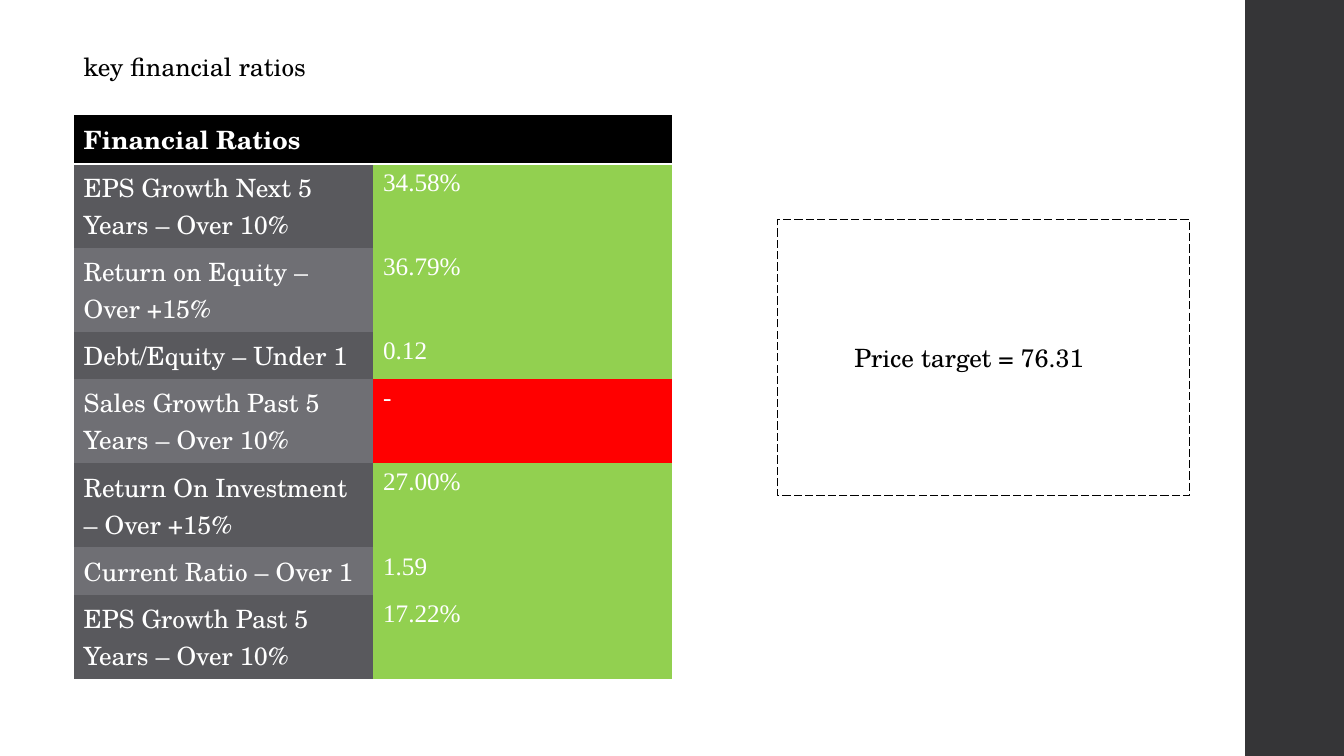
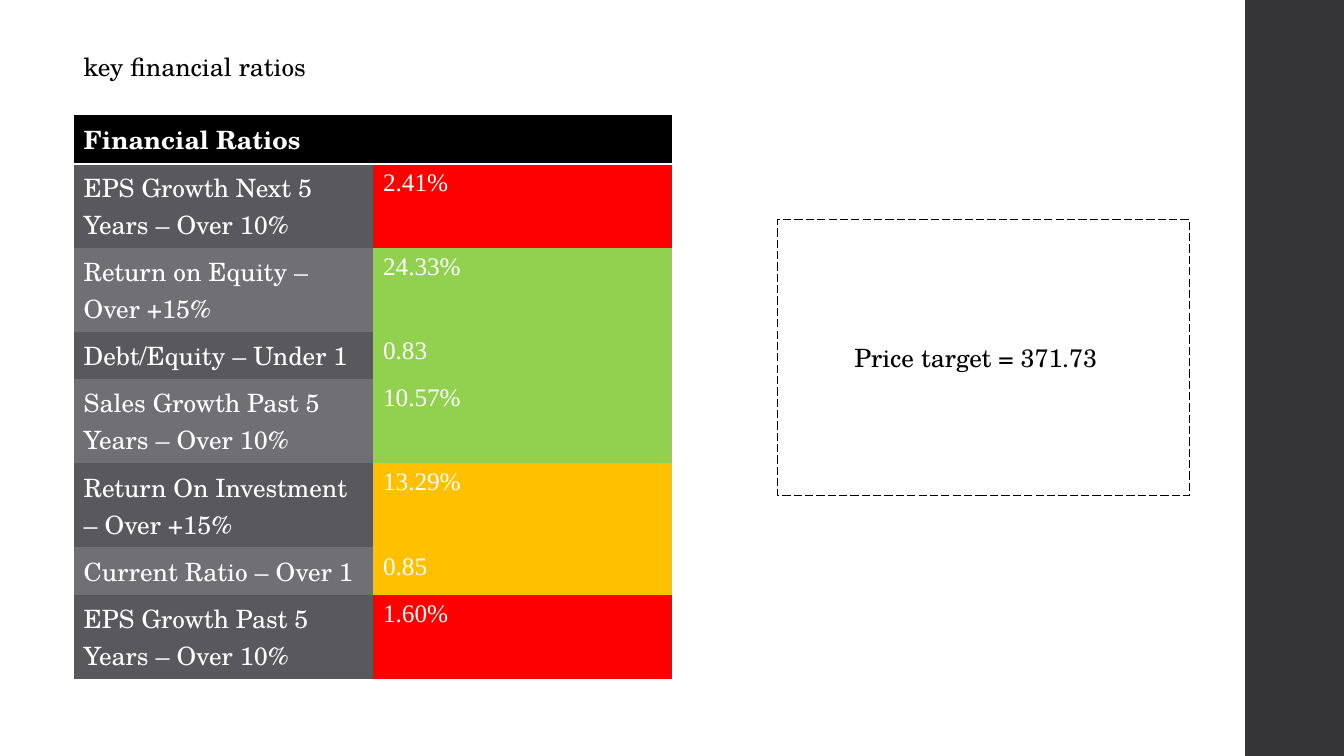
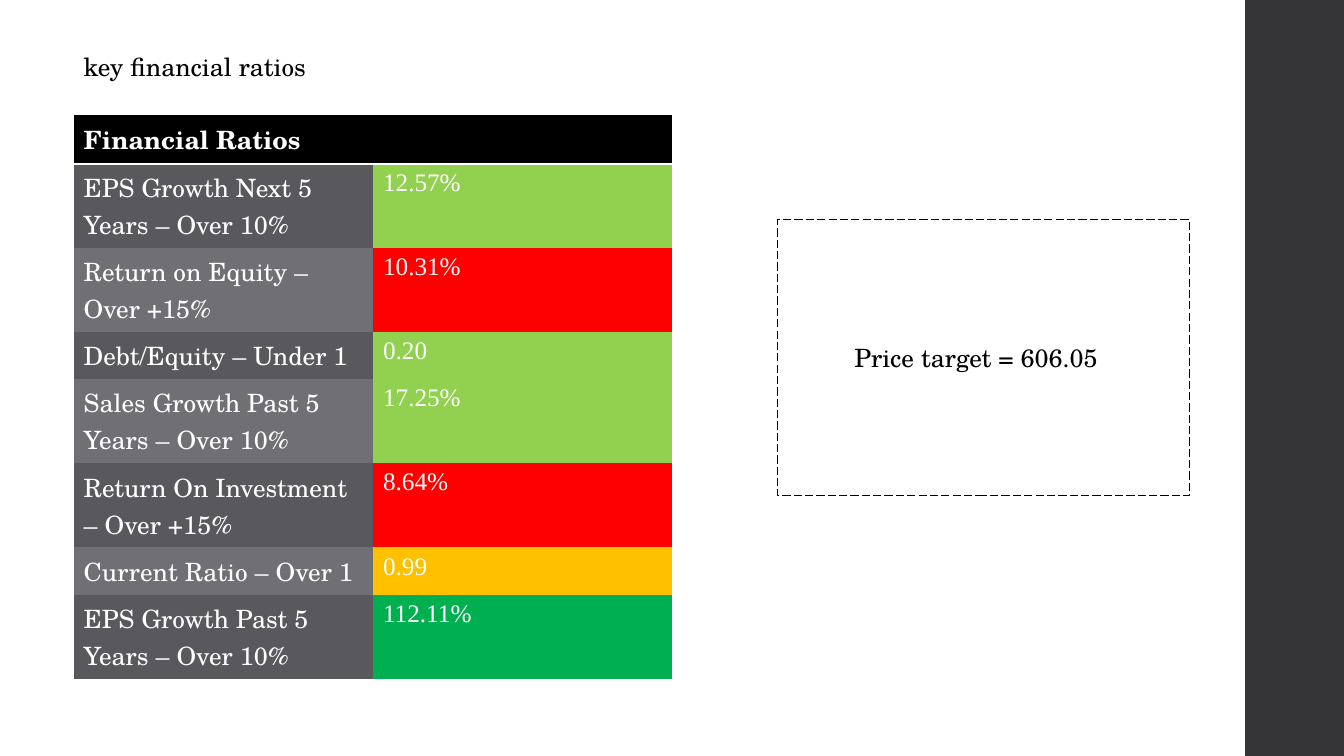
from lxml.etree import SubElement
from pptx import Presentation
from pptx.dml.color import RGBColor
from pptx.enum.dml import MSO_LINE_DASH_STYLE as Dash
from pptx.enum.shapes import MSO_SHAPE as Shape
from pptx.enum.text import MSO_ANCHOR as Anchor, MSO_AUTO_SIZE as AutoSize, PP_ALIGN as Align
from pptx.oxml import parse_xml
from pptx.oxml.ns import nsdecls, qn
from pptx.util import Inches, Pt

BLACK = RGBColor(0x00, 0x00, 0x00)
WHITE = RGBColor(0xFF, 0xFF, 0xFF)
BAND = RGBColor(0x35, 0x35, 0x37)
ROW_SHADES = (RGBColor(0x59, 0x59, 0x5D), RGBColor(0x6F, 0x6F, 0x74))
STRONG = RGBColor(0x00, 0xB0, 0x50)
GOOD = RGBColor(0x92, 0xD0, 0x50)
NEAR = RGBColor(0xFF, 0xC0, 0x00)
POOR = RGBColor(0xFF, 0x00, 0x00)

TEXT_FONT, VALUE_FONT = "TeX Gyre Schola", "Times New Roman"
SIZE = Pt(18)
PLAIN_STYLE = "{2D5ABB26-0587-4C30-8999-92F81FD0307C}"

WIDTH, HEIGHT = 13.33, 7.5
BAND_LEFT, BAND_WIDTH = 12.35, 1
MARGIN = 0.73
TITLE_BOX = (MARGIN, 0.46, 7.43, 0.4)
TABLE_TOP, COLUMN = 1.14, 2.97
ONE_LINE, TWO_LINES = 0.45, 0.77
FRAME_BOX = (7.71, 2.18, 4.09, 2.74)
TARGET_WIDTH, TARGET_HEIGHT = 2.76, 0.4

CRITERIA = (
    ("EPS Growth Next 5 Years – Over 10%", TWO_LINES),
    ("Return on Equity – Over +15%", TWO_LINES),
    ("Debt/Equity – Under 1", ONE_LINE),
    ("Sales Growth Past 5 Years – Over 10%", TWO_LINES),
    ("Return On Investment – Over +15%", TWO_LINES),
    ("Current Ratio – Over 1", ONE_LINE),
    ("EPS Growth Past 5 Years – Over 10%", TWO_LINES),
)
STOCKS = (
    ("76.31", (("34.58%", GOOD), ("36.79%", GOOD), ("0.12", GOOD), ("-", POOR),
               ("27.00%", GOOD), ("1.59", GOOD), ("17.22%", GOOD))),
    ("371.73", (("2.41%", POOR), ("24.33%", GOOD), ("0.83", GOOD), ("10.57%", GOOD),
                ("13.29%", NEAR), ("0.85", NEAR), ("1.60%", POOR))),
    ("606.05", (("12.57%", GOOD), ("10.31%", POOR), ("0.20", GOOD), ("17.25%", GOOD),
                ("8.64%", POOR), ("0.99", NEAR), ("112.11%", STRONG))),
)


def inches(box):
    """Turn a box given in inches into lengths."""
    return [Inches(length) for length in box]


def write(frame, text, color=BLACK, font=TEXT_FONT, bold=False):
    """Write one left-aligned run into a text frame."""
    line = frame.paragraphs[0]
    line.alignment = Align.LEFT
    run = line.add_run()
    run.text = text
    run.font.name, run.font.size, run.font.bold = font, SIZE, bold
    run.font.color.rgb = color


def fill_cell(cell, color, text="", font=TEXT_FONT, bold=False):
    """Colour a table cell and write its text in white."""
    cell.fill.solid()
    cell.fill.fore_color.rgb = color
    if text:
        write(cell.text_frame, text, WHITE, font, bold)


def underline_cell(cell):
    """Give a cell a white bottom border."""
    border = parse_xml(f'<a:lnB {nsdecls("a")} w="{Pt(2)}"/>')
    SubElement(SubElement(border, qn("a:solidFill")), qn("a:srgbClr"), val=str(WHITE))
    cell.fill.solid()
    cell.fill.fore_color.rgb = BLACK
    cell._tc.get_or_add_tcPr().insert(0, border)


def add_band(slide):
    """Draw the side band and move it to the layout all slides share."""
    band = slide.shapes.add_shape(
        Shape.RECTANGLE, *inches((BAND_LEFT, 0, BAND_WIDTH, HEIGHT)))
    band.shadow.inherit = False
    band.fill.solid()
    band.fill.fore_color.rgb = BAND
    band.line.fill.background()
    band.element.nvSpPr.cNvPr.set("id", "20")
    slide.slide_layout.shapes.element.insert(2, band.element)


def add_title(slide, text):
    """Place and format the title placeholder."""
    title = slide.shapes.title
    title.left, title.top, title.width, title.height = inches(TITLE_BOX)
    frame = title.text_frame
    frame.auto_size = AutoSize.NONE
    frame.vertical_anchor = Anchor.TOP
    write(frame, text)


def add_ratios(slide, ratios):
    """Add the table of criteria with their rated values."""
    heights = [ONE_LINE] + [height for _, height in CRITERIA]
    holder = slide.shapes.add_table(
        len(heights), 2, *inches((MARGIN, TABLE_TOP, 2 * COLUMN, sum(heights))))
    table = holder.table
    holder.element.find(".//" + qn("a:tableStyleId")).text = PLAIN_STYLE
    table.horz_banding = False
    for row, height in zip(table.rows, heights):
        row.height = Inches(height)
    for column, heading in enumerate(("Financial Ratios", "")):
        table.columns[column].width = Inches(COLUMN)
        fill_cell(table.cell(0, column), BLACK, heading, bold=True)
        underline_cell(table.cell(0, column))
    for index, ((criterion, _), (value, rating)) in enumerate(zip(CRITERIA, ratios)):
        fill_cell(table.cell(index + 1, 0), ROW_SHADES[index % 2], criterion)
        fill_cell(table.cell(index + 1, 1), rating, value, VALUE_FONT)


def add_target(slide, price):
    """Add the dashed frame with the price target in its middle."""
    frame = slide.shapes.add_shape(Shape.RECTANGLE, *inches(FRAME_BOX))
    frame.shadow.inherit = False
    frame.fill.background()
    frame.line.color.rgb = BLACK
    frame.line.width = Pt(0.75)
    frame.line.dash_style = Dash.LONG_DASH
    left, top, width, height = FRAME_BOX
    target = slide.shapes.add_textbox(*inches((
        left + (width - TARGET_WIDTH) / 2, top + (height - TARGET_HEIGHT) / 2,
        TARGET_WIDTH, TARGET_HEIGHT)))
    target.text_frame.word_wrap = True
    target.text_frame.auto_size = AutoSize.SHAPE_TO_FIT_TEXT
    write(target.text_frame, f"Price target = {price}")


def main():
    """Build one slide per stock and save the deck."""
    deck = Presentation()
    deck.slide_width, deck.slide_height = Inches(WIDTH), Inches(HEIGHT)
    title_only = deck.slide_layouts.get_by_name("Title Only")
    for number, (price, ratios) in enumerate(STOCKS):
        slide = deck.slides.add_slide(title_only)
        if number == 0:
            add_band(slide)
        add_ratios(slide, ratios)
        add_title(slide, "key financial ratios")
        add_target(slide, price)
    deck.save("out.pptx")


if __name__ == "__main__":
    main()
